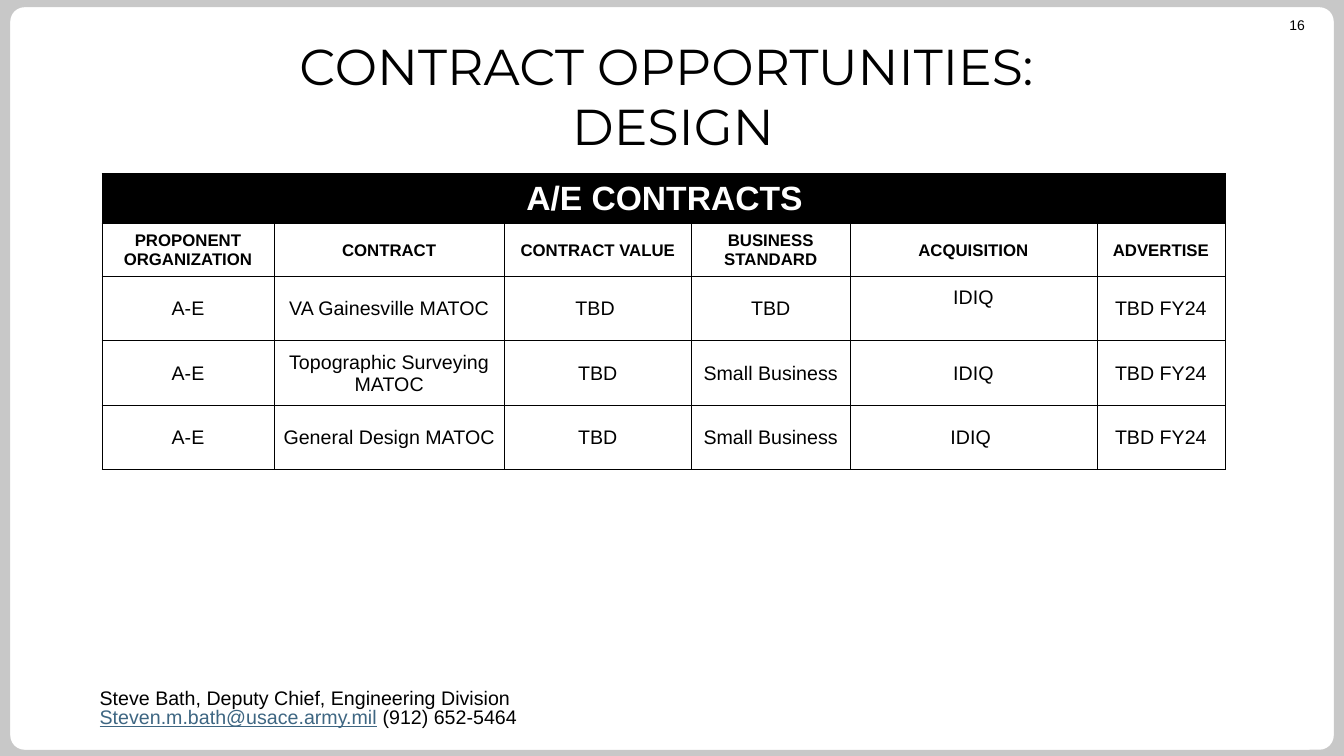
from lxml.etree import SubElement
from pptx import Presentation
from pptx.dml.color import RGBColor
from pptx.enum.shapes import MSO_SHAPE
from pptx.enum.text import MSO_ANCHOR, MSO_AUTO_SIZE, PP_ALIGN
from pptx.oxml.ns import qn
from pptx.util import Inches, Pt

BLACK = RGBColor(0, 0, 0)
WHITE = RGBColor(255, 255, 255)
GRAY = RGBColor(0xC8, 0xC8, 0xC8)
LINK = RGBColor(0x3E, 0x66, 0x82)

TITLE = "CONTRACT OPPORTUNITIES: \vDESIGN"
NUMBER = "16"
BANNER = "A/E CONTRACTS"
HEADS = ["PROPONENT ORGANIZATION", "CONTRACT", "CONTRACT VALUE",
         "BUSINESS STANDARD", "ACQUISITION", "ADVERTISE"]
ROWS = [
    ["A-E", "VA Gainesville MATOC", "TBD ", "TBD", "IDIQ", "TBD FY24"],
    ["A-E", "Topographic Surveying MATOC", "TBD", "Small Business", "IDIQ", "TBD FY24"],
    ["A-E", "General Design MATOC", "TBD", "Small Business", "IDIQ ", "TBD FY24"],
]
NAME = "Steve Bath, Deputy Chief, Engineering Division"
MAIL = "Steven.m.bath@usace.army.mil"
PHONE = " (912) 652-5464"

WIDTHS = [1.71, 2.28, 1.86, 1.57, 2.45, 1.27]
HEIGHTS = [0.5, 0.52] + [0.64] * len(ROWS)


def write(para, text, size=14, color=BLACK, bold=False, line=False,
          align=PP_ALIGN.LEFT, font="Arial", space=None):
    """Add one formatted run to a paragraph."""
    para.alignment = align
    if space:
        para.line_spacing = space
    for i, part in enumerate(text.split("\v")):
        if i:
            para.add_line_break()
        run = para.add_run()
        run.text = part
        run.font.name = font
        run.font.size = Pt(size)
        run.font.bold = bold
        run.font.underline = line
        run.font.color.rgb = color


def add_box(slide, left, top, width, height):
    box = slide.shapes.add_textbox(*map(Inches, (left, top, width, height)))
    box.text_frame.word_wrap = True
    return box.text_frame


def style(cell, fill=None):
    """Set the margins, black borders and fill of a cell."""
    cell.vertical_anchor = MSO_ANCHOR.MIDDLE
    cell.margin_left = cell.margin_right = cell.margin_top = Inches(0.01)
    cell.margin_bottom = 0
    props = cell._tc.get_or_add_tcPr()
    for side in ("a:lnL", "a:lnR", "a:lnT", "a:lnB"):
        edge = SubElement(props, qn(side), w=str(Pt(0.5)))
        solid = SubElement(edge, qn("a:solidFill"))
        SubElement(solid, qn("a:srgbClr"), val=str(BLACK))
    if fill is None:
        cell.fill.background()
    else:
        cell.fill.solid()
        cell.fill.fore_color.rgb = fill


def add_panel(slide):
    panel = slide.shapes.add_shape(
        MSO_SHAPE.ROUNDED_RECTANGLE, *map(Inches, (0.07, 0.04, 13.19, 7.43)))
    panel.adjustments[0] = 0.023
    panel.shadow.inherit = False
    panel.fill.solid()
    panel.fill.fore_color.rgb = WHITE
    panel.line.color.rgb = GRAY
    panel.line.width = Pt(4.5)
    slide.shapes._spTree.insert(2, panel._element)  # behind the title


def add_title(slide):
    title = slide.shapes.title
    title.left, title.top, title.width, title.height = map(
        Inches, (2.43, 0.29, 8.49, 1.31))
    frame = title.text_frame
    frame.auto_size = MSO_AUTO_SIZE.NONE
    frame.word_wrap = False
    frame.vertical_anchor = MSO_ANCHOR.MIDDLE
    write(frame.paragraphs[0], TITLE, size=36, font="Montserrat",
          align=PP_ALIGN.CENTER)


def add_grid(slide):
    grid = slide.shapes.add_table(
        len(HEIGHTS), len(WIDTHS), Inches(1.01), Inches(1.72),
        Inches(sum(WIDTHS)), Inches(sum(HEIGHTS))).table
    for col, width in zip(grid.columns, WIDTHS):
        col.width = Inches(width)
    for row, height in zip(grid.rows, HEIGHTS):
        row.height = Inches(height)

    for c in range(len(WIDTHS)):
        style(grid.cell(0, c), BLACK)
    banner = grid.cell(0, 1)
    banner.merge(grid.cell(0, len(WIDTHS) - 1))
    banner.margin_left = Inches(2.5)
    write(banner.text_frame.paragraphs[0], BANNER, size=24, color=WHITE, bold=True)

    for r, texts in enumerate([HEADS] + ROWS, 1):
        head = r == 1
        for c, text in enumerate(texts):
            cell = grid.cell(r, c)
            style(cell)
            write(cell.text_frame.paragraphs[0], text, size=12 if head else 14,
                  bold=head, align=PP_ALIGN.CENTER)
    grid.cell(2, 4).margin_bottom = Inches(0.22)  # raised entry


def main():
    deck = Presentation()
    deck.slide_width, deck.slide_height = Inches(13.33), Inches(7.5)
    slide = deck.slides.add_slide(deck.slide_layouts[5])
    slide.background.fill.solid()
    slide.background.fill.fore_color.rgb = GRAY
    add_panel(slide)
    add_title(slide)
    add_grid(slide)

    number = add_box(slide, 12.2, 0.16, 0.84, 0.17)
    number.margin_top = number.margin_bottom = 0
    write(number.paragraphs[0], NUMBER, size=10, align=PP_ALIGN.RIGHT)

    contact = add_box(slide, 0.89, 6.8, 8.86, 0.48)
    write(contact.paragraphs[0], NAME, space=0.8)
    reach = contact.add_paragraph()
    write(reach, MAIL, color=LINK, line=True, space=0.8)
    write(reach, PHONE, space=0.8)
    deck.save("out.pptx")


if __name__ == "__main__":
    main()
